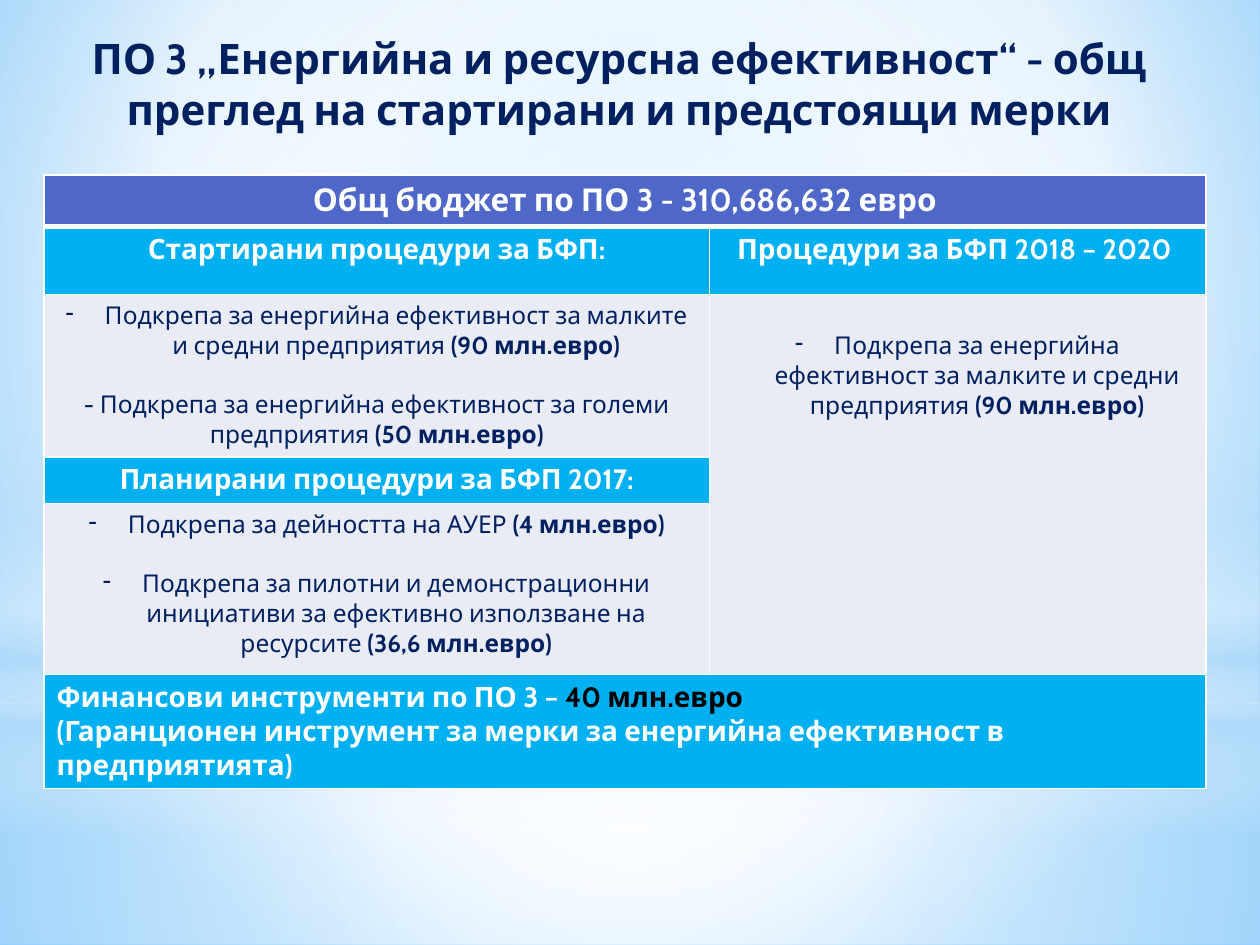
"""Build the slide on energy and resource efficiency measures."""
import lxml.etree
import pptx
import pptx.dml.color
import pptx.enum.shapes
import pptx.enum.text
import pptx.oxml.ns
import pptx.util

Inches = pptx.util.Inches
Pt = pptx.util.Pt
qn = pptx.oxml.ns.qn
CENTER = pptx.enum.text.PP_ALIGN.CENTER
LEFT = pptx.enum.text.PP_ALIGN.LEFT
SHAPES = pptx.enum.shapes.MSO_SHAPE
FONT = "Cabin"
NAVY, WHITE, BLACK = "002060", "FFFFFF", "000000"
INDIGO, CYAN, PALE, SKY = "4E67C8", "00B0F0", "E9EBF5", "B4DCFA"
CENTRE_POINT = (50, 50, 50, 50)


def color(hex_value):
    """Turn a hex string into a colour."""
    return pptx.dml.color.RGBColor.from_string(hex_value)


def add_node(parent, tag, **attributes):
    """Append an XML element with the given attributes."""
    values = {key: str(value) for key, value in attributes.items()}
    return lxml.etree.SubElement(parent, qn(tag), values)


def set_gradient(owner, fill, stops, focus=None, angle=90):
    """Fill with (position, colour, opacity) stops, radial if a focus is given."""
    fill.gradient()
    gradient = owner.find(".//" + qn("a:gradFill"))
    for child in list(gradient):
        gradient.remove(child)
    stop_list = add_node(gradient, "a:gsLst")
    for position, hex_value, opacity in stops:
        stop = add_node(stop_list, "a:gs", pos=position * 1000)
        tone = add_node(stop, "a:srgbClr", val=hex_value)
        if opacity < 100:
            add_node(tone, "a:alpha", val=opacity * 1000)
    if focus:
        radial = add_node(gradient, "a:path", path="circle")
        sides = {side: value * 1000 for side, value in zip("ltrb", focus)}
        add_node(radial, "a:fillToRect", **sides)
    else:
        add_node(gradient, "a:lin", ang=angle * 60000, scaled=0)


def add_glow(slide, preset, top, height, stops, focus=CENTRE_POINT):
    """Add a full-width translucent backdrop layer."""
    glow = slide.shapes.add_shape(preset, 0, Inches(top), Inches(10), Inches(height))
    glow.shadow.inherit = False
    glow.line.fill.background()
    set_gradient(glow.element, glow.fill, stops, focus)


def add_backdrop(slide):
    """Paint the background and its layers of light."""
    set_gradient(slide.element, slide.background.fill,
                 [(0, "9ED5FF", 100), (60, WHITE, 100), (100, "5BB9FF", 100)],
                 (20, 10, 20, 60))
    add_glow(slide, SHAPES.RECTANGLE, 5.58, 1.92,
             [(0, WHITE, 91), (37, WHITE, 76), (100, SKY, 79)])
    add_glow(slide, SHAPES.RECTANGLE, 0, 5.58,
             [(0, WHITE, 89), (48, WHITE, 62), (100, SKY, 79)])
    add_glow(slide, SHAPES.RECTANGLE, 4.12, 2.5,
             [(0, WHITE, 0), (29, WHITE, 30), (45, SKY, 40), (55, WHITE, 26),
              (65, SKY, 60), (100, WHITE, 0)], None)
    add_glow(slide, SHAPES.OVAL, 1.75, 5.58, [(0, WHITE, 100), (56, WHITE, 0)])


def format_run(run, size, hex_value, bold=True):
    """Set the font of a run."""
    run.font.name = FONT
    run.font.size = Pt(size)
    run.font.bold = bold
    run.font.color.rgb = color(hex_value)


def add_title(slide, text):
    """Place the title above the backdrop."""
    title = slide.shapes.title
    title.element.getparent().append(title.element)
    title.left, title.top = Inches(0.35), Inches(0.21)
    title.width, title.height = Inches(9.13), Inches(1.1)
    title.text_frame.text = text
    title.text_frame.word_wrap = True
    title.text_frame.vertical_anchor = pptx.enum.text.MSO_ANCHOR.TOP
    heading = title.text_frame.paragraphs[0]
    heading.alignment = CENTER
    format_run(heading.runs[0], 24, NAVY)


def style_cell(cell, fill, bottom=1):
    """Give a cell white borders and a solid fill."""
    properties = cell._tc.get_or_add_tcPr()
    for side, width in (("L", 1), ("R", 1), ("T", 1), ("B", bottom)):
        border = add_node(properties, "a:ln" + side, w=Pt(width))
        add_node(add_node(border, "a:solidFill"), "a:srgbClr", val=WHITE)
    cell.fill.solid()
    cell.fill.fore_color.rgb = color(fill)


def fill_heading(cell, text, size=16):
    """Write a centred white heading in a cell."""
    cell.text_frame.text = text
    heading = cell.text_frame.paragraphs[0]
    heading.alignment = CENTER
    format_run(heading.runs[0], size, WHITE)


def add_dash(paragraph):
    """Give a paragraph a hanging dash bullet."""
    properties = paragraph._p.get_or_add_pPr()
    properties.set("marL", str(Inches(0.31)))
    properties.set("indent", str(-Inches(0.31)))
    add_node(properties, "a:buFontTx")
    add_node(properties, "a:buChar", char="-")


def fill_measures(cell, measures):
    """List measures with their budgets in bold."""
    frame = cell.text_frame
    for index, (measure, budget, dashed) in enumerate(measures):
        item = frame.add_paragraph() if index else frame.paragraphs[0]
        item.alignment = CENTER
        if index:
            item.space_before = Pt(17)
        if dashed:
            add_dash(item)
        item.text = measure
        item.add_run().text = budget
        for run, bold in zip(item.runs, (False, True)):
            format_run(run, 14, NAVY, bold)


def fill_instruments(cell):
    """Write the closing row on financial instruments."""
    frame = cell.text_frame
    frame.text = "Финансови инструменти по ПО 3 – "
    frame.paragraphs[0].add_run().text = "40 млн.евро"
    frame.add_paragraph().text = ("(Гаранционен инструмент за мерки за енергийна "
                                  "ефективност в предприятията)")
    for line in frame.paragraphs:
        line.alignment = LEFT
        for run, hex_value in zip(line.runs, (WHITE, BLACK)):
            format_run(run, 16, hex_value)


def add_budget_table(slide):
    """Build the table of started and planned procedures."""
    widths, heights = (5.28, 3.94), (0.4, 0.54, 1.29, 0.36, 1.36, 0.9)
    table = slide.shapes.add_table(
        len(heights), len(widths), Inches(0.35), Inches(1.39),
        Inches(sum(widths)), Inches(sum(heights))).table
    for column, width in zip(table.columns, widths):
        column.width = Inches(width)
    fills = ((INDIGO,) * 2, (CYAN,) * 2, (PALE,) * 2, (CYAN, PALE), (PALE,) * 2, (CYAN,) * 2)
    for row_index, (row, height) in enumerate(zip(table.rows, heights)):
        row.height = Inches(height)
        for cell, fill in zip(row.cells, fills[row_index]):
            style_cell(cell, fill, 1 if row_index else 3)
    for first, last in (((0, 0), (0, 1)), ((2, 1), (4, 1)), ((5, 0), (5, 1))):
        table.cell(*first).merge(table.cell(*last))

    small_firms = ("Подкрепа за енергийна ефективност за малките и средни предприятия ",
                   "(90 млн.евро)", True)
    fill_heading(table.cell(0, 0), "Общ бюджет по ПО 3 - 310,686,632 евро", 18)
    fill_heading(table.cell(1, 0), "Стартирани процедури за БФП:")
    fill_heading(table.cell(1, 1), "Процедури за БФП 2018 – 2020 ")
    fill_heading(table.cell(3, 0), "Планирани процедури за БФП 2017:")
    fill_measures(table.cell(2, 0), [
        small_firms,
        ("- Подкрепа за енергийна ефективност за големи предприятия ",
         "(50 млн.евро)", False)])
    fill_measures(table.cell(2, 1), [small_firms])
    table.cell(2, 1).margin_top = Inches(0.29)
    fill_measures(table.cell(4, 0), [
        ("Подкрепа за дейността на АУЕР ", "(4 млн.евро)", True),
        ("Подкрепа за пилотни и демонстрационни инициативи за ефективно "
         "използване на ресурсите ", "(36,6 млн.евро)", True)])
    fill_instruments(table.cell(5, 0))


def main():
    """Assemble and save the slide."""
    deck = pptx.Presentation()
    deck.slide_width, deck.slide_height = Inches(10), Inches(7.5)
    slide = deck.slides.add_slide(deck.slide_layouts[5])
    add_backdrop(slide)
    add_title(slide, "ПО 3 „Енергийна и ресурсна ефективност“ - общ преглед "
                     "на стартирани и предстоящи мерки")
    add_budget_table(slide)
    deck.save("out.pptx")


if __name__ == "__main__":
    main()
